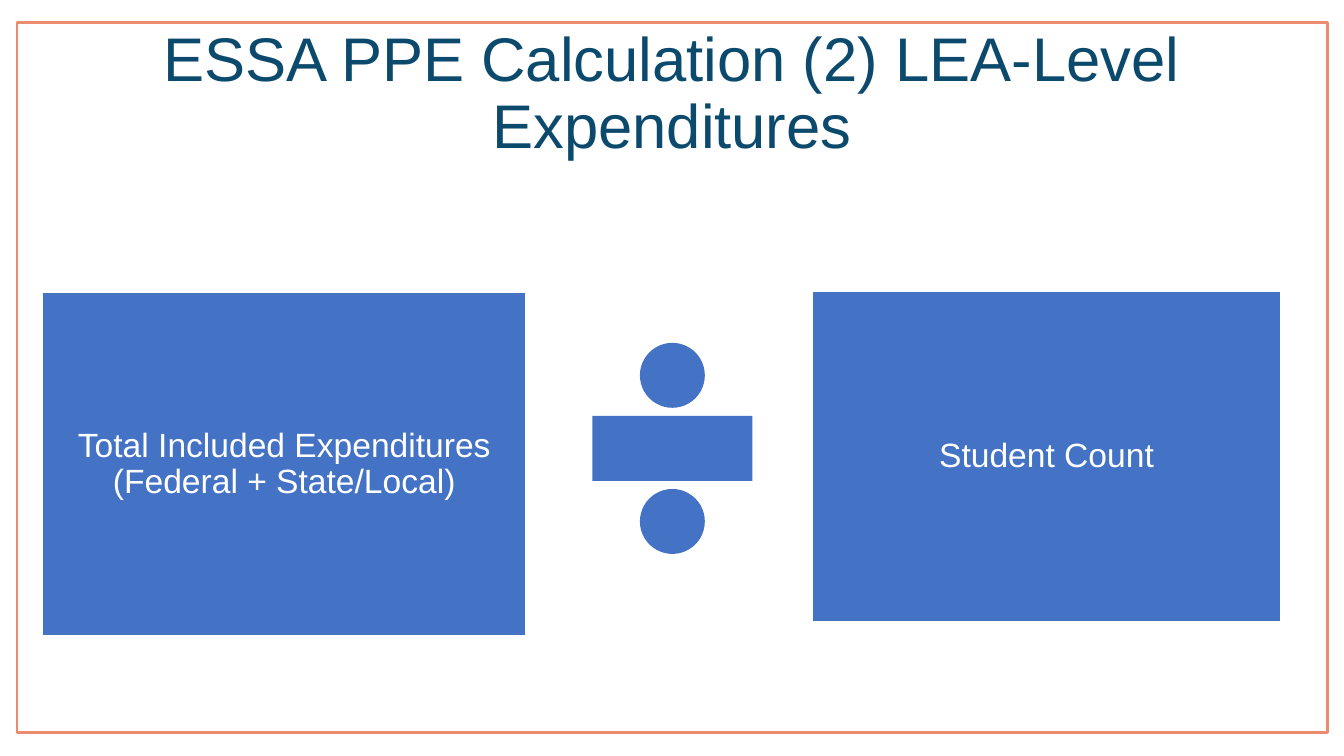
from pptx import Presentation
from pptx.dml.color import RGBColor
from pptx.enum.shapes import MSO_SHAPE
from pptx.enum.text import MSO_ANCHOR, PP_ALIGN
from pptx.util import Cm, Pt

RECTANGLE = MSO_SHAPE.RECTANGLE
DIVIDE = MSO_SHAPE.MATH_DIVIDE
MIDDLE = MSO_ANCHOR.MIDDLE
CENTER = PP_ALIGN.CENTER


class Theme:
    font = "Arial"
    title_size = 44
    body_size = 24
    navy = RGBColor(0x0C, 0x4A, 0x6D)
    blue = RGBColor(0x44, 0x72, 0xC4)
    coral = RGBColor(0xED, 0x8B, 0x6F)
    white = RGBColor(0xFF, 0xFF, 0xFF)


# Places are left, top, width, height in centimetres.
TITLE = "ESSA PPE Calculation (2) LEA-Level Expenditures"
FRAME_PLACE = (0.43, 0.56, 33.02, 17.91)
TITLE_PLACE = (0.43, 0.56, 33.02, 3.68)
DIVIDE_PLACE = (14.2, 7.82, 5.49, 6.96)
OPERANDS = [
    ("Total Included Expenditures (Federal + State/Local)", (1.07, 7.37, 12.19, 8.66)),
    ("Student Count", (20.47, 7.34, 11.81, 8.33)),
]


def add_block(page, kind, place, fill=None, line=None, line_width=1):
    block = page.shapes.add_shape(kind, *map(Cm, place))
    block.shadow.inherit = False
    if fill is None:
        block.fill.background()
    else:
        block.fill.solid()
        block.fill.fore_color.rgb = fill
    if line is None:
        block.line.fill.background()
    else:
        block.line.color.rgb = line
        block.line.width = Pt(line_width)
    return block


def write(box, text, *, size, color, side_inset, end_inset):
    frame = box.text_frame
    frame.word_wrap = True
    frame.vertical_anchor = MIDDLE
    frame.margin_left = frame.margin_right = Cm(side_inset)
    frame.margin_top = frame.margin_bottom = Cm(end_inset)
    para = frame.paragraphs[0]
    para.alignment = CENTER
    para.line_spacing = 0.9
    span = para.add_run()
    span.text = text
    span.font.name = Theme.font
    span.font.size = Pt(size)
    span.font.color.rgb = color


def main():
    deck = Presentation()
    deck.slide_width, deck.slide_height = Cm(33.87), Cm(19.05)
    blank_layout = deck.slide_layouts[6]
    page = deck.slides.add_slide(blank_layout)

    add_block(page, RECTANGLE, FRAME_PLACE, line=Theme.coral, line_width=2)
    title_box = page.shapes.add_textbox(*map(Cm, TITLE_PLACE))
    write(title_box, TITLE, size=Theme.title_size, color=Theme.navy,
          side_inset=0.25, end_inset=0.13)

    add_block(page, DIVIDE, DIVIDE_PLACE, fill=Theme.blue)
    for text, place in OPERANDS:
        operand = add_block(page, RECTANGLE, place, fill=Theme.blue, line=Theme.white)
        write(operand, text, size=Theme.body_size, color=Theme.white,
              side_inset=0.08, end_inset=0.08)

    deck.save("out.pptx")


if __name__ == "__main__":
    main()
